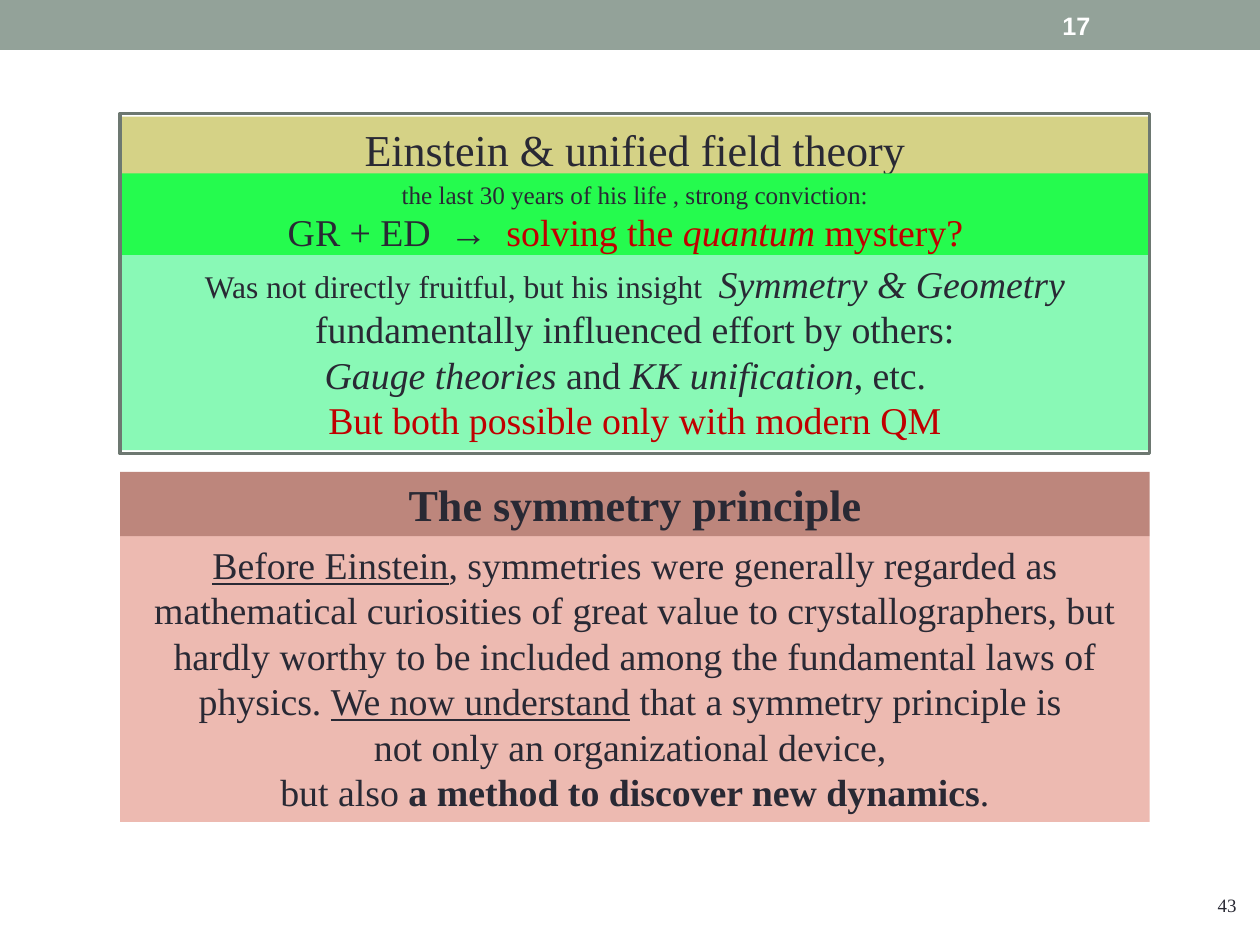
import pptx
import pptx.dml.color
import pptx.enum.shapes
import pptx.enum.text
import pptx.oxml.ns
import pptx.util
from lxml import etree

Pt = pptx.util.Pt
RGBColor = pptx.dml.color.RGBColor
ALIGN = pptx.enum.text.PP_ALIGN
ANCHOR = pptx.enum.text.MSO_ANCHOR

WHITE = RGBColor(0xFF, 0xFF, 0xFF)
INK = RGBColor(0x29, 0x29, 0x34)
RED = RGBColor(0xC0, 0x00, 0x00)
BAR_GREY = RGBColor(0x93, 0xA2, 0x99)
FRAME_GREY = RGBColor(0x6D, 0x78, 0x71)
KHAKI = RGBColor(0xD5, 0xD2, 0x86)
GREEN = RGBColor(0x25, 0xFB, 0x4E)
MINT = RGBColor(0x89, 0xF9, 0xB6)
BROWN = RGBColor(0xBD, 0x86, 0x7C)
ROSE = RGBColor(0xED, 0xBA, 0xB1)

SLIDE_WIDTH, SLIDE_HEIGHT = 800, 600
PANEL_LEFT, PANEL_WIDTH = 76.2, 653.8
SERIF = "Times New Roman"
LEADING = 1.2

CONVICTION = [
    [("the last 30 years of his life , strong conviction:", {"size": 16})],
    [("GR + ED  →  ", {}), ("solving the ", {"color": RED}),
     ("quantum", {"color": RED, "italic": True}), (" mystery?  ", {"color": RED})],
]
INFLUENCE = [
    [("Was not directly fruitful, but his insight  ", {"size": 20}),
     ("Symmetry & Geometry", {"italic": True})],
    [("fundamentally influenced effort by others:", {})],
    [("Gauge theories ", {"italic": True}), ("and ", {}),
     ("KK unification", {"italic": True}), (", etc.  ", {})],
    [("But both possible only with modern QM", {"color": RED})],
]
SYMMETRY = [
    [("Before Einstein", {"underline": True}),
     (", symmetries were generally regarded as mathematical curiosities of great value "
      "to crystallographers, but hardly worthy to be included among the fundamental "
      "laws of physics. ", {}),
     ("We now understand", {"underline": True}),
     (" that a symmetry principle is ", {})],
    [("not only an organizational device, ", {})],
    [("but also ", {}), ("a method to discover new dynamics", {"bold": True}), (".", {})],
]


def format_run(run, size=24, color=INK, bold=False, italic=False, underline=False, name=SERIF):
    font = run.font
    font.name, font.size = name, Pt(size)
    font.bold, font.italic, font.underline = bold, italic, underline
    font.color.rgb = color


def place(shape, left, top, width, height):
    shape.left, shape.top, shape.width, shape.height = map(Pt, (left, top, width, height))


def fill_panel(shape, color, paragraphs, top, height):
    place(shape, PANEL_LEFT, top, PANEL_WIDTH, height)
    shape.fill.solid()
    shape.fill.fore_color.rgb = color
    shape.line.fill.background()
    frame = shape.text_frame
    frame.word_wrap = True
    frame.auto_size = pptx.enum.text.MSO_AUTO_SIZE.NONE
    frame.vertical_anchor = ANCHOR.TOP
    for index, pieces in enumerate(paragraphs):
        paragraph = frame.add_paragraph() if index else frame.paragraphs[0]
        paragraph.alignment = ALIGN.CENTER
        paragraph.space_before = paragraph.space_after = Pt(0)
        paragraph.line_spacing = Pt(LEADING * max(style.get("size", 24) for _, style in pieces))
        for text, style in pieces:
            run = paragraph.add_run()
            run.text = text
            format_run(run, **style)


def remove_bullets(shape):
    for paragraph in shape.text_frame.paragraphs:
        properties = paragraph._p.get_or_add_pPr()
        properties.set("marL", "0")
        properties.set("indent", "0")
        etree.SubElement(properties, pptx.oxml.ns.qn("a:buNone"))


def add_rectangle(slide, left, top, width, height):
    shape = slide.shapes.add_shape(
        pptx.enum.shapes.MSO_SHAPE.RECTANGLE, Pt(left), Pt(top), Pt(width), Pt(height))
    shape.shadow.inherit = False
    return shape


def add_panel(slide, color, paragraphs, top, height):
    shape = add_rectangle(slide, PANEL_LEFT, top, PANEL_WIDTH, height)
    fill_panel(shape, color, paragraphs, top, height)


def add_header_bar(slide):
    bar = add_rectangle(slide, 0, 0, SLIDE_WIDTH, 31.7)
    bar.fill.solid()
    bar.fill.fore_color.rgb = BAR_GREY
    bar.line.fill.background()


def add_frame(slide, top, height):
    frame = add_rectangle(slide, PANEL_LEFT, top, PANEL_WIDTH, height)
    frame.fill.background()
    frame.line.color.rgb = FRAME_GREY
    frame.line.width = Pt(2.08)


def add_number(slide, text, left, top, width, height, **style):
    box = slide.shapes.add_textbox(Pt(left), Pt(top), Pt(width), Pt(height))
    frame = box.text_frame
    frame.word_wrap = True
    frame.vertical_anchor = ANCHOR.MIDDLE
    frame.text = text
    format_run(frame.paragraphs[0].runs[0], **style)


def main():
    presentation = pptx.Presentation()
    presentation.slide_width, presentation.slide_height = Pt(SLIDE_WIDTH), Pt(SLIDE_HEIGHT)
    slide = presentation.slides.add_slide(presentation.slide_layouts[1])

    title, body = slide.placeholders
    fill_panel(title, KHAKI, [[("Einstein & unified field theory", {"size": 28})]], 74, 40.8)
    fill_panel(body, ROSE, SYMMETRY, 340.4, 181.4)
    remove_bullets(body)

    add_header_bar(slide)
    add_panel(slide, GREEN, CONVICTION, 110, 55.2)
    add_panel(slide, BROWN, [[("The symmetry principle", {"size": 28, "bold": True})]], 299.6, 40.8)
    add_panel(slide, MINT, INFLUENCE, 162, 123.8)
    add_frame(slide, 72, 216)
    add_number(slide, "17", 667.5, 1.5, 93.6, 28.8, size=16, color=WHITE, bold=True, name="Arial")
    add_number(slide, "43", 766, 564, 34, 21.6, size=12)

    presentation.save("out.pptx")


if __name__ == "__main__":
    main()
